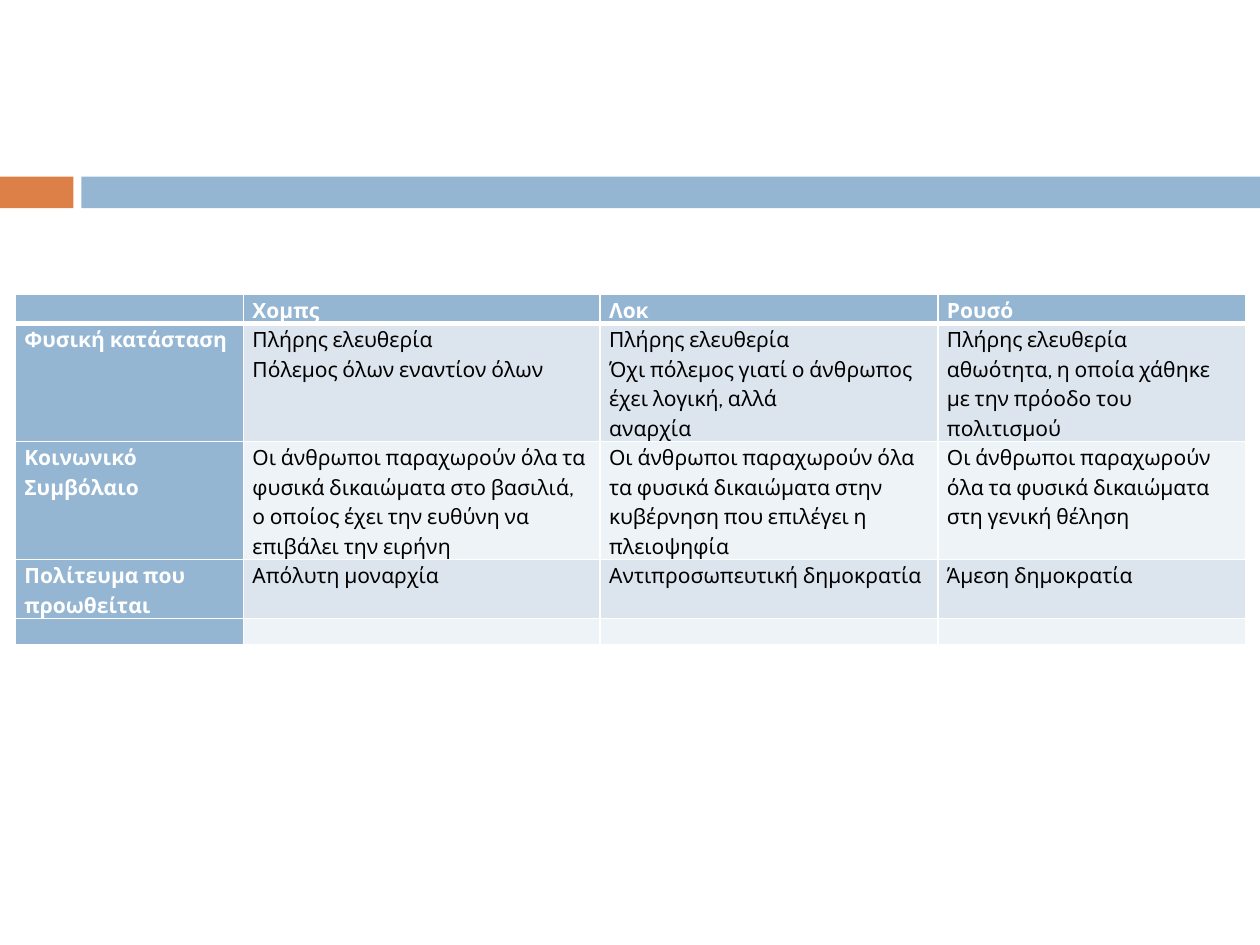
from lxml.etree import SubElement
from pptx import Presentation
from pptx.dml.color import RGBColor
from pptx.enum.shapes import MSO_SHAPE as Shape
from pptx.oxml.ns import qn
from pptx.util import Cm, Pt

WHITE = RGBColor(0xFF, 0xFF, 0xFF)
BLACK = RGBColor(0x00, 0x00, 0x00)
BLUE = RGBColor(0x94, 0xB6, 0xD2)
ORANGE = RGBColor(0xDD, 0x80, 0x47)
BANDS = [RGBColor(0xDC, 0xE5, 0xEE), RGBColor(0xEE, 0xF3, 0xF7)]

COLUMN_WIDTHS = [4.6, 7.19, 6.81, 6.2]
ROW_HEIGHTS = [0.58, 2.29, 2.29, 0.53, 0.53]
# "\v" breaks a line, "\n" starts a paragraph
PHILOSOPHERS = [
    ["", "Χομπς", "Λοκ", "Ρουσό"],
    ["Φυσική κατάσταση",
     "Πλήρης ελευθερία\vΠόλεμος όλων εναντίον όλων",
     "Πλήρης ελευθερία\vΌχι πόλεμος γιατί ο άνθρωπος έχει λογική, αλλά\nαναρχία",
     "Πλήρης ελευθερία\vαθωότητα, η οποία χάθηκε με την πρόοδο του πολιτισμού"],
    ["Κοινωνικό Συμβόλαιο",
     "Οι άνθρωποι παραχωρούν όλα τα φυσικά δικαιώματα στο βασιλιά, "
     "ο οποίος έχει την ευθύνη να επιβάλει την ειρήνη",
     "Οι άνθρωποι παραχωρούν όλα τα φυσικά δικαιώματα στην κυβέρνηση "
     "που επιλέγει η πλειοψηφία",
     "Οι άνθρωποι παραχωρούν όλα τα φυσικά δικαιώματα στη γενική θέληση"],
    ["Πολίτευμα που προωθείται", "Απόλυτη μοναρχία",
     "Αντιπροσωπευτική δημοκρατία", "Άμεση δημοκρατία"],
    ["", "", "", ""],
]


class SlideBuilder:
    font = "Cabin"
    size = Pt(12)
    line_spacing = 1.15

    def __init__(self, page):
        self.page = page

    def bar(self, left, top, width, height, color):
        box = self.page.shapes.add_shape(
            Shape.RECTANGLE, Cm(left), Cm(top), Cm(width), Cm(height))
        box.shadow.inherit = False
        box.fill.solid()
        box.fill.fore_color.rgb = color
        box.line.fill.background()

    def table(self, left, top, widths, heights, rows):
        frame = self.page.shapes.add_table(
            len(rows), len(widths), Cm(left), Cm(top),
            Cm(sum(widths)), Cm(sum(heights)))
        table = frame.table
        for column, width in zip(table.columns, widths):
            column.width = Cm(width)
        for row, height in zip(table.rows, heights):
            row.height = Cm(height)
        for i, texts in enumerate(rows):
            for j, text in enumerate(texts):
                heading = i == 0 or j == 0
                cell = table.cell(i, j)
                self.borders(cell, top=3 if i == 1 else 1, bottom=3 if i == 0 else 1)
                cell.fill.solid()
                cell.fill.fore_color.rgb = BLUE if heading else BANDS[(i - 1) % 2]
                self.cell_text(cell, text, heading)

    def cell_text(self, cell, text, heading):
        cell.margin_left = cell.margin_right = Cm(0.18)
        cell.margin_top = cell.margin_bottom = 0
        cell.text_frame.text = text
        for para in cell.text_frame.paragraphs:
            para.line_spacing = self.line_spacing
            for span in para.runs:
                span.font.name = self.font
                span.font.size = self.size
                span.font.bold = heading
                span.font.color.rgb = WHITE if heading else BLACK
            self.size_breaks(para)

    def size_breaks(self, para):
        """Give line breaks and empty paragraphs the height of the text."""
        marks = [SubElement(line_break, qn("a:rPr"))
                 for line_break in para._p.findall(qn("a:br"))]
        if not para.runs:
            marks.append(SubElement(para._p, qn("a:endParaRPr")))
        for mark in marks:
            mark.set("sz", str(int(self.size.pt * 100)))
            SubElement(mark, qn("a:latin"), typeface=self.font)

    def borders(self, cell, top, bottom):
        properties = cell._tc.get_or_add_tcPr()
        for side, width in zip("LRTB", (1, 1, top, bottom)):
            line = SubElement(properties, qn(f"a:ln{side}"), w=str(Pt(width)))
            fill = SubElement(line, qn("a:solidFill"))
            SubElement(fill, qn("a:srgbClr"), val=str(WHITE))


def main():
    deck = Presentation()
    deck.slide_width, deck.slide_height = Cm(25.4), Cm(19.05)
    blank_layout = deck.slide_layouts[6]
    builder = SlideBuilder(deck.slides.add_slide(blank_layout))
    builder.bar(0, 3.56, 1.48, 0.64, ORANGE)
    builder.bar(1.64, 3.56, 23.76, 0.64, BLUE)
    builder.table(0.31, 5.93, COLUMN_WIDTHS, ROW_HEIGHTS, PHILOSOPHERS)
    deck.save("out.pptx")


if __name__ == "__main__":
    main()
